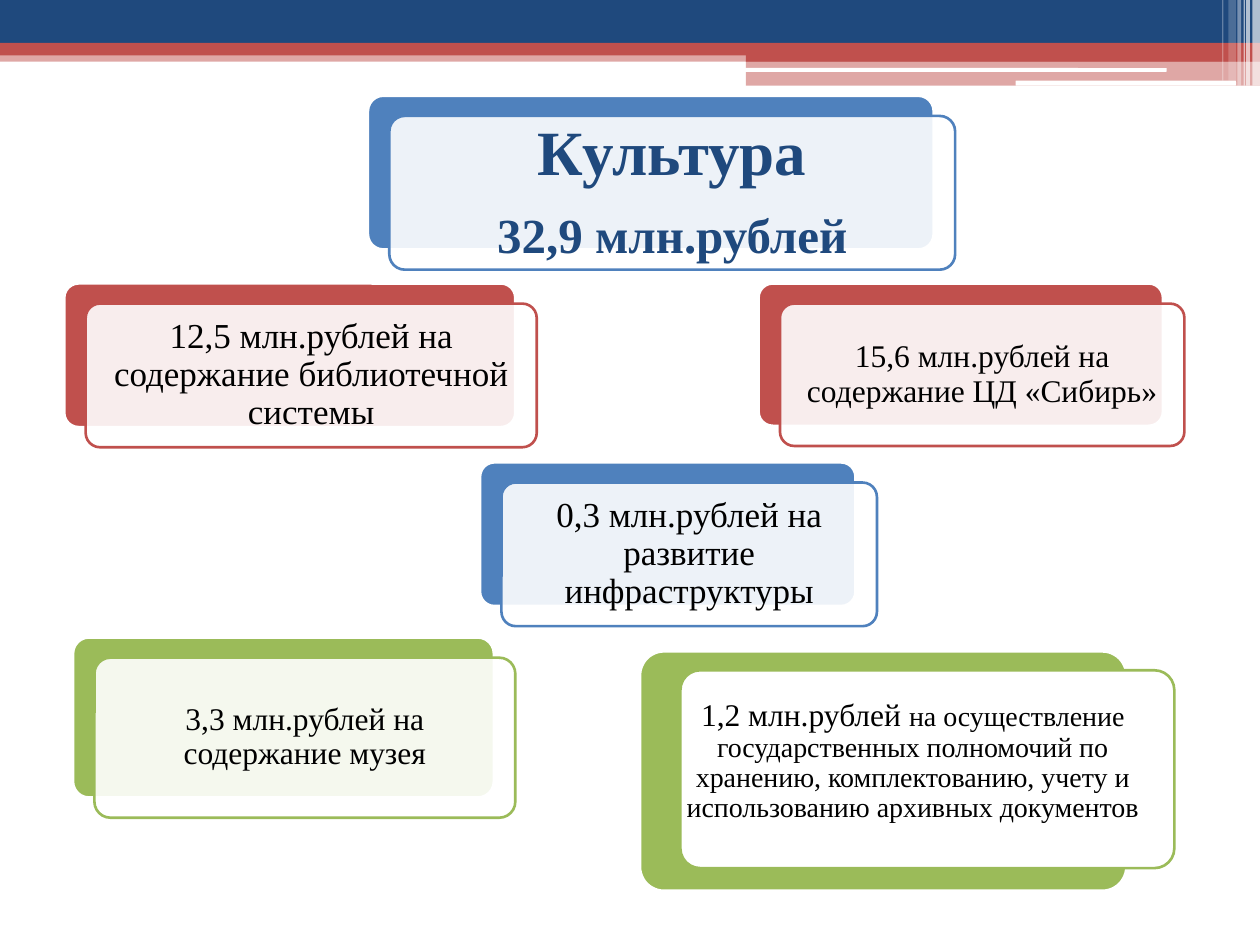
"""Build the slide on culture spending."""
import pptx
import pptx.util
import pptx.dml.color
import pptx.enum.shapes
import pptx.enum.text
import pptx.oxml
import pptx.oxml.ns

HUES = {"navy": "1F497D", "red": "C0504D", "blue": "4F81BD",
        "green": "9BBB59", "white": "FFFFFF", "black": "000000"}
FONT = "Times New Roman"
KIND = pptx.enum.shapes.MSO_SHAPE
Pt = pptx.util.Pt

deck = pptx.Presentation()
deck.slide_width = pptx.util.Inches(10)
deck.slide_height = pptx.util.Inches(7.5)
col, row = deck.slide_width / 100, deck.slide_height / 75
slide = deck.slides.add_slide(deck.slide_layouts[5])
shapes = slide.shapes
title = shapes.title


def block(kind, area, hue, alpha=100, edge=None, bend=None):
    x, y, w, h = area
    shape = shapes.add_shape(kind, int(x * col), int(y * row), int(w * col), int(h * row))
    shape.shadow.inherit = False
    shape.fill.solid()
    shape.fill.fore_color.rgb = pptx.dml.color.RGBColor.from_string(HUES[hue])
    if alpha < 100:
        tint = shape.element.spPr.find(".//" + pptx.oxml.ns.qn("a:srgbClr"))
        tint.append(pptx.oxml.parse_xml(
            f'<a:alpha {pptx.oxml.ns.nsdecls("a")} val="{alpha * 1000}"/>'))
    if edge:
        shape.line.color.rgb = pptx.dml.color.RGBColor.from_string(HUES[edge])
        shape.line.width = Pt(1.5)
    else:
        shape.line.fill.background()
    if bend:
        shape.adjustments[0] = bend


def write(box, area, pad, paras, hue, bold=False):
    x, y, w, h = area
    box.left, box.top, box.width, box.height = (
        int(x * col), int(y * row), int(w * col), int(h * row))
    frame = box.text_frame
    frame.word_wrap = True
    frame.auto_size = pptx.enum.text.MSO_AUTO_SIZE.NONE
    frame.vertical_anchor = pptx.enum.text.MSO_ANCHOR.MIDDLE
    frame.margin_left = frame.margin_right = int(pad * col)
    frame.margin_top = frame.margin_bottom = int(pad * row)
    for i, runs in enumerate(paras):
        para = frame.add_paragraph() if i else frame.paragraphs[0]
        para.alignment = pptx.enum.text.PP_ALIGN.CENTER
        para.line_spacing = 0.9
        para.space_before = Pt(0)
        para.space_after = Pt(0.35 * runs[0][1])
        for text, size in runs:
            run = para.add_run()
            run.text = text
            run.font.name = FONT
            run.font.size = Pt(size)
            run.font.bold = bold
            run.font.color.rgb = pptx.dml.color.RGBColor.from_string(HUES[hue])


bands = [
    ((0, 4, 100, 0.9), "red", 50),
    ((0, 0, 100, 3.4), "navy", 100),
    ((0, 3.4, 100, 1), "red", 100),
    ((59.2, 3.9, 40.8, 1), "red", 100),
    ((59.2, 4.8, 40.8, 2), "red", 50),
]
for area, hue, alpha in bands:
    block(KIND.RECTANGLE, area, hue, alpha)

for area in [(59.1, 5.4, 33.5, 0.3), (80.6, 6.4, 17.5, 0.4)]:
    block(KIND.ROUNDED_RECTANGLE, area, "white", bend=0.17)

stripes = [(99.4, 0.6, 6.8, 65), (98.9, 0.3, 6.8, 65), (98.7, 0.1, 6.8, 60),
           (98.2, 0.3, 6.8, 40), (97.5, 0.6, 6.4, 20), (97, 0.1, 6.4, 30)]
for x, w, h, alpha in stripes:
    block(KIND.RECTANGLE, (x, 0, w, h), "white", alpha)

cards = [
    ((29.2, 7.6, 44.9, 12.2), "blue", 1.5, None),
    ((5.1, 22.5, 35.8, 11.4), "red", 0.8,
     [("12,5 млн.рублей на содержание библиотечной системы", 20)]),
    ((5.8, 50.6, 33.4, 12.7), "green", 0.7,
     [("3,3 млн.рублей на содержание музея", 18)]),
    ((60.2, 22.5, 32.1, 11.3), "red", 0.7,
     [("15,6 млн.рублей на содержание ЦД «Сибирь»", 18)]),
    ((38.1, 36.7, 29.8, 11.4), "blue", 0.8,
     [("0,3 млн.рублей на развитие инфраструктуры", 20)]),
]
for (x, y, w, h), hue, pad, runs in cards:
    front = (x + 1.7, y + 1.6, w, h)
    block(KIND.ROUNDED_RECTANGLE, (x, y, w, h), hue, edge="white", bend=0.1)
    block(KIND.ROUNDED_RECTANGLE, front, "white", 90, hue, 0.1)
    if runs:
        write(shapes.add_textbox(0, 0, 0, 0), front, pad, [runs], "black")
    else:
        shapes.element.append(title.element)
        write(title, front, pad,
              [[("Культура", 36)], [("32,9 млн.рублей", 28)]], "navy", True)

block(KIND.ROUNDED_RECTANGLE, (50.8, 51.7, 38.6, 19), "green", edge="white", bend=0.1)
block(KIND.ROUNDED_RECTANGLE, (54, 53.2, 39.2, 15.7), "white", edge="green", bend=0.1)
write(shapes.add_textbox(0, 0, 0, 0), (51.6, 53.2, 41.7, 14.5), 0.7, [[
    ("1,2 млн.рублей ", 18),
    ("на осуществление государственных полномочий по хранению, "
     "комплектованию, учету и использованию архивных документов", 16)]], "black")

deck.save("out.pptx")
